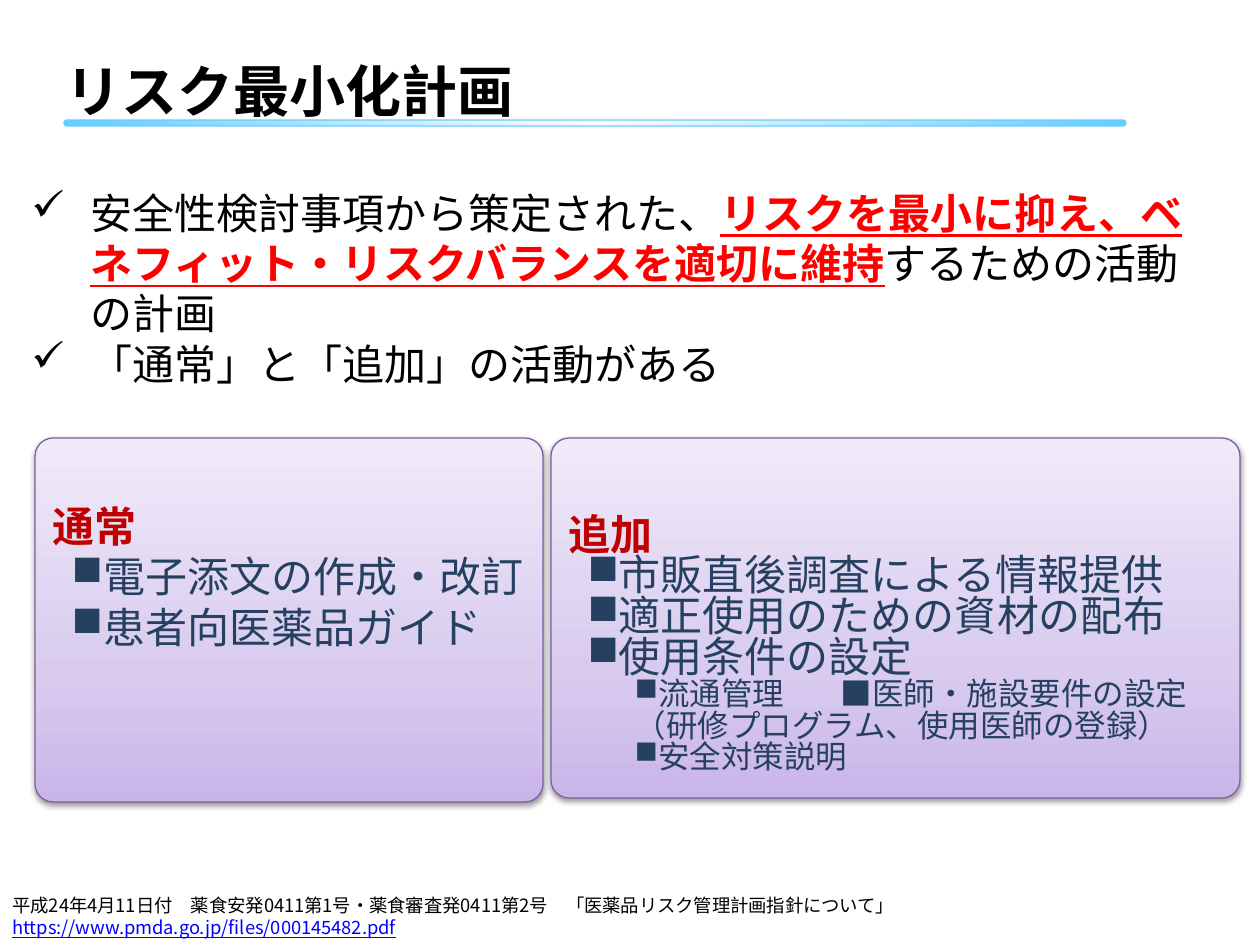
from copy import deepcopy
from lxml.etree import SubElement
from pptx import Presentation
from pptx.dml.color import RGBColor
from pptx.enum.shapes import MSO_SHAPE
from pptx.enum.text import MSO_ANCHOR, PP_ALIGN
from pptx.oxml.ns import qn
from pptx.util import Emu, Pt

FONT = "Noto Sans CJK JP"
BLACK = RGBColor(0, 0, 0)
RED = RGBColor(255, 0, 0)
DARK = RGBColor(0xC0, 0, 0)
NAVY = RGBColor(0x25, 0x40, 0x61)
BLUE = RGBColor(0, 0, 255)
SKY = RGBColor(0x66, 0xCC, 0xFF)
WHITE = RGBColor(255, 255, 255)
EDGE = RGBColor(0x7D, 0x60, 0xA0)
LILAC = [(0, RGBColor(0xC9, 0xB5, 0xE8)), (0.35, RGBColor(0xD8, 0xCB, 0xEE)),
         (1, RGBColor(0xF0, 0xEA, 0xF9))]
GLOW = [(0, SKY), (0.5, WHITE), (1, SKY)]

TITLE = "リスク最小化計画"
POINTS = [
    [("安全性検討事項から策定された、", {}),
     ("リスクを最小に抑え、ベネフィット・リスクバランスを適切に維持",
      dict(color=RED, bold=True, under=True)),
     ("するための活動の計画", {})],
    "「通常」と「追加」の活動がある",
]
HEAD = dict(color=DARK, bold=True)
ITEM = dict(color=NAVY, bullet="■", left=19)
TIGHT = dict(ITEM, line=23.2)
SUB = dict(color=NAVY, size=18, left=66, line=13.5, before=4.5)
PANELS = [
    dict(box=(35, 438, 508, 364), top=57, rows=[
        ("通常", HEAD),
        ("電子添文の作成・改訂", ITEM),
        ("患者向医薬品ガイド", ITEM),
    ]),
    dict(box=(551, 438, 689, 360), top=65, rows=[
        ("追加", HEAD),
        ("市販直後調査による情報提供", TIGHT),
        ("適正使用のための資材の配布", TIGHT),
        ("使用条件の設定", TIGHT),
        ("流通管理\t■医師・施設要件の設定", dict(SUB, bullet="■", tab=272)),
        ("（研修プログラム、使用医師の登録）", SUB),
        ("安全対策説明", dict(SUB, bullet="■")),
    ]),
]
NOTES = [
    ("平成24年4月11日付　薬食安発0411第1号・薬食審査発0411第2号　「医薬品リスク管理計画指針について」", {}),
    ("https://www.pmda.go.jp/files/000145482.pdf", dict(color=BLUE, under=True)),
]


def px(n):
    return Emu(round(n * 914400 / 126))


def write(para, text, size=24, color=BLACK, bold=False, under=False,
          bullet=None, left=0, hang=0, line=None, before=0, tab=None):
    props = para._p.get_or_add_pPr()
    props.set("marL", str(px(left)))
    props.set("indent", str(px(-hang)))
    para.alignment = PP_ALIGN.LEFT
    if line:
        para.line_spacing = Pt(line)
    if before:
        para.space_before = Pt(before)
    if bullet:
        tint = SubElement(props, qn("a:buClr"))
        SubElement(tint, qn("a:srgbClr"), val=str(color))
        SubElement(props, qn("a:buFont"), typeface="OpenSymbol")
        SubElement(props, qn("a:buChar"), char=bullet)
    if tab:
        tabs = SubElement(props, qn("a:tabLst"))
        SubElement(tabs, qn("a:tab"), pos=str(px(tab)), algn="l")
    parts = [(text, {})] if isinstance(text, str) else text
    for words, own in parts:
        look = dict(color=color, bold=bold, under=under) | own
        run = para.add_run()
        run.text = words
        font = run.font
        font.name, font.size = FONT, Pt(size)
        font.color.rgb = look["color"]
        font.bold, font.underline = look["bold"], look["under"]
        SubElement(run._r.get_or_add_rPr(), qn("a:ea"), typeface=FONT)


def fill_text(shape, rows, anchor=MSO_ANCHOR.TOP):
    frame = shape.text_frame
    frame.word_wrap = True
    frame.vertical_anchor = anchor
    for i, (text, look) in enumerate(rows):
        para = frame.add_paragraph() if i else frame.paragraphs[0]
        write(para, text, **look)


def add_box(slide, box, rows, **look):
    fill_text(slide.shapes.add_textbox(*map(px, box)), rows, **look)


def add_round(slide, box, stops, edge, angle, bend):
    shape = slide.shapes.add_shape(MSO_SHAPE.ROUNDED_RECTANGLE, *map(px, box))
    shape.adjustments[0] = bend
    shape.fill.gradient()
    shape.fill.gradient_angle = angle
    ramp = shape._element.spPr.find(".//" + qn("a:gsLst"))
    ramp.append(deepcopy(ramp[-1]))
    for stop, (place, color) in zip(shape.fill.gradient_stops, stops):
        stop.position = place
        stop.color.rgb = color
    shape.line.color.rgb = edge
    shape.line.width = Pt(0.75)
    shape.shadow.inherit = False
    return shape


def add_shade(shape):
    group = shape._element.spPr.find(qn("a:effectLst"))
    shade = SubElement(group, qn("a:outerShdw"), blurRad=str(Pt(3.1)),
                       dist=str(Pt(1.6)), dir="5400000", rotWithShape="0")
    tint = SubElement(shade, qn("a:srgbClr"), val=str(BLACK))
    SubElement(tint, qn("a:alpha"), val="38000")


def main():
    deck = Presentation()
    deck.slide_width, deck.slide_height = px(1260), px(945)
    slide = deck.slides.add_slide(deck.slide_layouts[6])
    add_round(slide, (64, 120, 1062, 6), GLOW, SKY, 0, 0.5)
    for panel in PANELS:
        shape = add_round(slide, panel["box"], LILAC, EDGE, 90, 0.05)
        add_shade(shape)
        shape.text_frame.margin_top = px(panel["top"])
        fill_text(shape, panel["rows"])
    mark = dict(bullet="✓", left=59, hang=59)
    add_box(slide, (19, 181, 1179, 217), [(text, mark) for text in POINTS])
    add_box(slide, (0, 888, 983, 57),
            [(text, dict(look, size=10.5)) for text, look in NOTES])
    add_box(slide, (53, 50, 1123, 81), [(TITLE, dict(size=32, bold=True))],
            anchor=MSO_ANCHOR.MIDDLE)
    deck.save("out.pptx")


if __name__ == "__main__":
    main()
